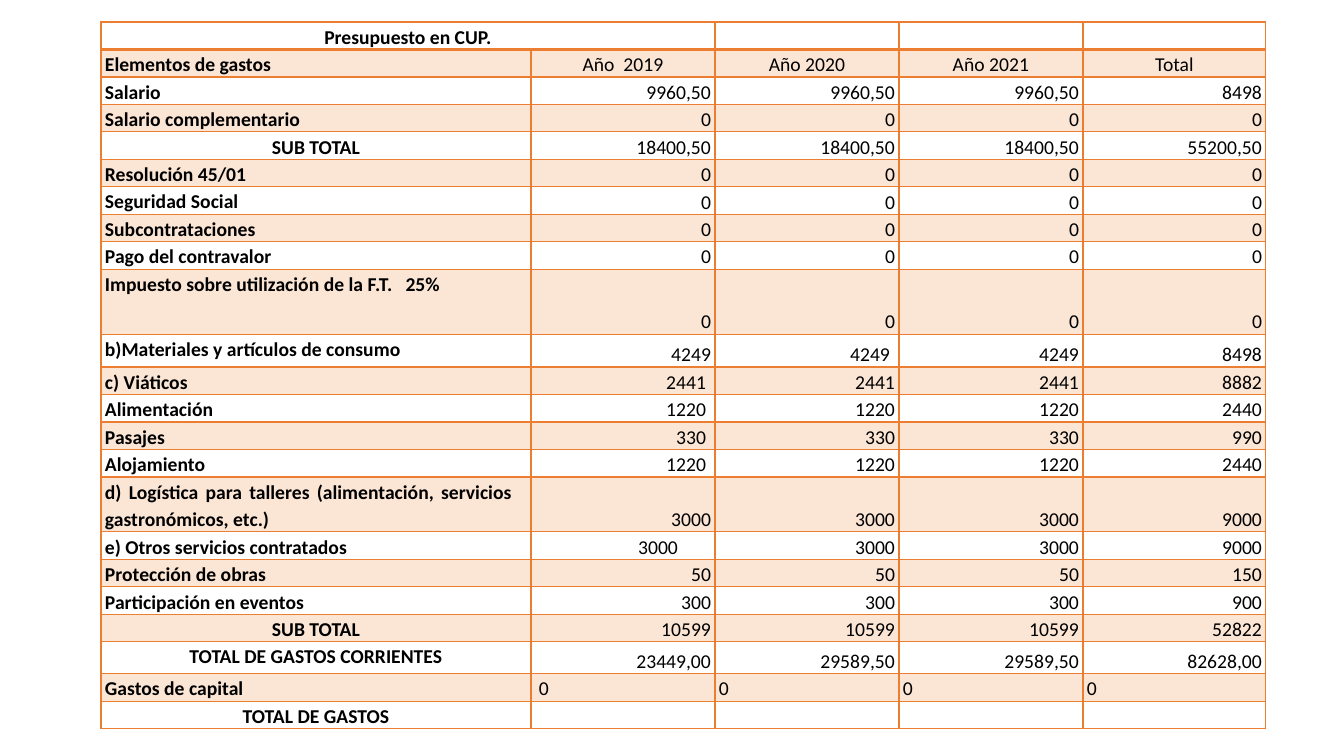
from lxml import etree
from pptx import Presentation
from pptx.dml.color import RGBColor
from pptx.enum import text
from pptx.oxml.ns import qn

# Content: label, then 2019, 2020, 2021 and total
TITLE = "Presupuesto en CUP."
HEADER = ("Elementos de gastos", "Año  2019", "Año 2020", "Año 2021", "Total")
EXPENSES = [
    ("Salario", "9960,50", "9960,50", "9960,50", "8498"),
    ("Salario complementario", "0", "0", "0", "0"),
    ("SUB TOTAL", "18400,50", "18400,50", "18400,50", "55200,50"),
    ("Resolución 45/01", "0", "0", "0", "0"),
    ("Seguridad Social", "0", "0", "0", "0"),
    ("Subcontrataciones", "0", "0", "0", "0"),
    ("Pago del contravalor", "0", "0", "0", "0"),
    ("Impuesto sobre utilización de la F.T.   25%", "0", "0", "0", "0"),
    ("b)Materiales y artículos de consumo", "4249", "4249", "4249", "8498"),
    ("c) Viáticos", "2441", "2441", "2441", "8882"),
    ("Alimentación", "1220", "1220", "1220", "2440"),
    ("Pasajes", "330", "330", "330", "990"),
    ("Alojamiento", "1220", "1220", "1220", "2440"),
    ("d) Logística para talleres (alimentación, servicios gastronómicos, etc.)",
     "3000", "3000", "3000", "9000"),
    ("e) Otros servicios contratados", "3000", "3000", "3000", "9000"),
    ("Protección de obras", "50", "50", "50", "150"),
    ("Participación en eventos", "300", "300", "300", "900"),
    ("SUB TOTAL", "10599", "10599", "10599", "52822"),
    ("TOTAL DE GASTOS CORRIENTES", "23449,00", "29589,50", "29589,50", "82628,00"),
    ("Gastos de capital", "0", "0", "0", "0"),
    ("TOTAL DE GASTOS", "", "", "", ""),
]
ROWS = [(TITLE, "", "", "", ""), HEADER, *EXPENSES]

# Format, lengths in px
PX = 914400 / 100.8
COLORS = {"accent": "ED7D31", "text": "000000"}
FONT_NAME, FONT_SIZE = "Calibri", 14
COLUMN_WIDTHS = (430, 184, 184, 184, 183)
ROW_HEIGHT = 27
TALL_ROWS = {9: 65, 10: 33, 15: 55, 20: 32}
CAPITAL_ROW = 21
MARGIN = 4
RIGHT_MARGINS = {(10, 2): 9, (11, 1): 9, (12, 1): 9, (13, 1): 9, (14, 1): 9,
                 (15, 0): 19, (16, 1): 37}
LEFT_MARGINS = {(CAPITAL_ROW, 1): 8}
BORDER, HEAVY_BORDER = 12700, 25400
ALIGN, ANCHOR = text.PP_ALIGN, text.MSO_ANCHOR


def px(length):
    return round(length * PX)


def add_borders(cell, row):
    properties = cell._tc.get_or_add_tcPr()
    for side in "LRTB":
        heavy = (row, side) in ((0, "B"), (1, "T"))
        line = etree.SubElement(properties, qn(f"a:ln{side}"),
                                w=str(HEAVY_BORDER if heavy else BORDER))
        fill = etree.SubElement(line, qn("a:solidFill"))
        etree.SubElement(fill, qn("a:srgbClr"), val=COLORS["accent"])


def fill_cell(cell, row):
    if row % 2 == 0:
        cell.fill.background()
        return
    cell.fill.solid()
    cell.fill.fore_color.rgb = RGBColor.from_string(COLORS["accent"])
    color = cell._tc.tcPr.find(qn("a:solidFill")).find(qn("a:srgbClr"))
    etree.SubElement(color, qn("a:alpha"), val="20000")


def alignment(row, column, label):
    if row == 0 or (row == 1 and column):
        return ALIGN.CENTER
    if column == 0:
        return ALIGN.CENTER if "TOTAL" in label else ALIGN.JUSTIFY
    return ALIGN.LEFT if row == CAPITAL_ROW else ALIGN.RIGHT


def write_cell(cell, row, column, content):
    bottom = row == 0 or (row > 1 and column > 0)
    cell_format = {
        "margin_left": px(LEFT_MARGINS.get((row, column), MARGIN)),
        "margin_right": px(RIGHT_MARGINS.get((row, column), MARGIN)),
        "margin_top": 0, "margin_bottom": 0,
        "vertical_anchor": ANCHOR.BOTTOM if bottom else ANCHOR.TOP,
    }
    for name, value in cell_format.items():
        setattr(cell, name, value)
    paragraph = cell.text_frame.paragraphs[0]
    paragraph.alignment = alignment(row, column, content)
    paragraph.line_spacing = 1.15
    if not content:
        # Keeps empty cells from stretching their row
        etree.SubElement(paragraph._p, qn("a:endParaRPr"), sz=str(FONT_SIZE * 100))
        return
    run = paragraph.add_run()
    run.text = content
    font_format = {"name": FONT_NAME, "size": FONT_SIZE * 12700, "bold": column == 0}
    for name, value in font_format.items():
        setattr(run.font, name, value)
    run.font.color.rgb = RGBColor.from_string(COLORS["text"])


def main():
    presentation = Presentation()
    presentation.slide_width, presentation.slide_height = px(1344), px(756)
    slide = presentation.slides.add_slide(presentation.slide_layouts[6])

    # Budget table
    heights = [TALL_ROWS.get(row, ROW_HEIGHT) for row in range(len(ROWS))]
    table = slide.shapes.add_table(
        len(ROWS), len(COLUMN_WIDTHS), px(101), px(22),
        px(sum(COLUMN_WIDTHS)), px(sum(heights))).table
    table.first_row = table.horz_banding = False
    for column, width in zip(table.columns, COLUMN_WIDTHS):
        column.width = px(width)
    for table_row, height in zip(table.rows, heights):
        table_row.height = px(height)

    # Cells
    for row, contents in enumerate(ROWS):
        for column, content in enumerate(contents):
            cell = table.cell(row, column)
            add_borders(cell, row)
            fill_cell(cell, row)
            write_cell(cell, row, column, content)
    table.cell(0, 0).merge(table.cell(0, 1))

    presentation.save("out.pptx")


if __name__ == "__main__":
    main()
